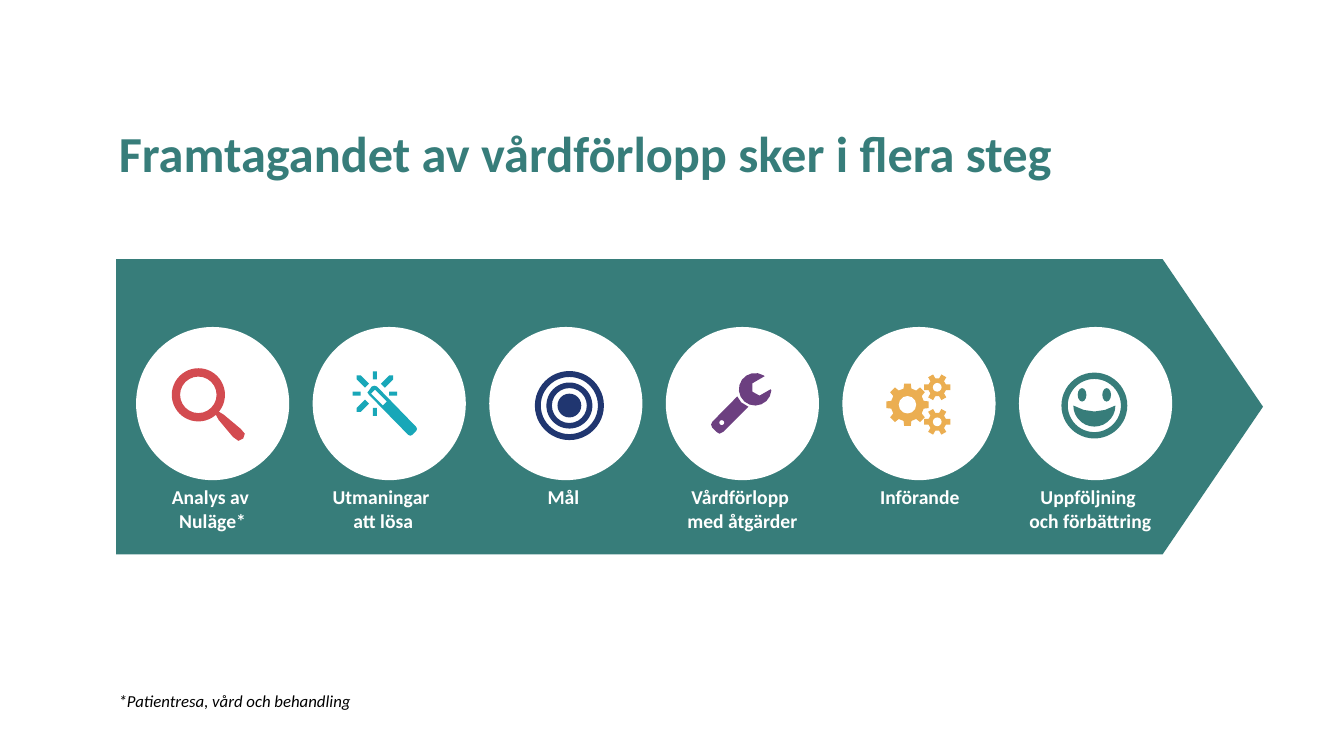
from math import cos, pi, radians, sin

from pptx import Presentation
from pptx.dml.color import RGBColor
from pptx.enum.shapes import MSO_SHAPE as Shape
from pptx.enum.text import MSO_ANCHOR as Anchor, MSO_AUTO_SIZE as AutoSize, PP_ALIGN as Align
from pptx.util import Cm, Pt

TEAL = RGBColor(0x37, 0x7D, 0x7A)
WHITE = RGBColor(0xFF, 0xFF, 0xFF)
BLACK = RGBColor(0x00, 0x00, 0x00)
RED = RGBColor(0xD3, 0x4B, 0x50)
CYAN = RGBColor(0x18, 0xA7, 0xB8)
NAVY = RGBColor(0x20, 0x36, 0x70)
PURPLE = RGBColor(0x6C, 0x3F, 0x80)
AMBER = RGBColor(0xEB, 0xAE, 0x51)

UNITS_PER_CM = 1000
STEP_PITCH = 4.45
DISC_RADIUS = 1.93
LABEL_WIDTH = 4.27


def write(frame, text, *, size, color, bold=False, italic=False,
          align=Align.LEFT, anchor=Anchor.TOP, spacing=None):
    frame.text = text
    frame.word_wrap = True
    frame.auto_size = AutoSize.NONE
    frame.vertical_anchor = anchor
    for paragraph in frame.paragraphs:
        paragraph.alignment = align
        paragraph.line_spacing = spacing
        for run in paragraph.runs:
            font = run.font
            font.name, font.size = "Calibri", Pt(size)
            font.bold, font.italic = bold, italic
            font.color.rgb = color


def paint(shape, color):
    shape.shadow.inherit = False
    shape.fill.solid()
    shape.fill.fore_color.rgb = color
    shape.line.fill.background()


def add_round(slide, x, y, rx, ry, color, kind=Shape.OVAL):
    shape = slide.shapes.add_shape(kind, Cm(x - rx), Cm(y - ry), Cm(2 * rx), Cm(2 * ry))
    paint(shape, color)
    return shape


def add_ring(slide, x, y, outer, inner, color):
    ring = add_round(slide, x, y, outer, outer, color, Shape.DONUT)
    ring.adjustments[0] = (outer - inner) / (2 * outer)


def add_outlines(slide, x, y, outlines, color):
    builder = None
    for outline in outlines:
        points = [(px * UNITS_PER_CM, py * UNITS_PER_CM) for px, py in outline]
        if builder is None:
            builder = slide.shapes.build_freeform(*points[0], scale=Cm(1) / UNITS_PER_CM)
        else:
            builder.move_to(*points[0])
        builder.add_line_segments(points[1:], close=True)
    paint(builder.convert_to_shape(Cm(x), Cm(y)), color)


def arc(x, y, radius, start, end, count=14):
    angles = [radians(start + (end - start) * i / count) for i in range(count + 1)]
    return [(x + radius * cos(a), y + radius * sin(a)) for a in angles]


def quarter_turn(points, turns):
    for _ in range(turns):
        points = [(-y, x) for x, y in points]
    return points


def add_magnifier(slide, x, y, color):
    handle = [(0.15, 0.2), (0.28, 0.28), (0.71, 0.64), (0.81, 0.76), (0.77, 0.88),
              (0.65, 0.94), (0.51, 0.84), (0.15, 0.41), (0.08, 0.28)]
    add_ring(slide, x - 0.36, y - 0.22, 0.67, 0.46, color)
    add_outlines(slide, x, y, [handle], color)


def add_wand(slide, x, y, color):
    straight_ray = [(0.36, -0.05), (0.56, -0.05), (0.56, 0.05), (0.36, 0.05)]
    slanted_ray = [(-0.15, -0.25), (-0.36, -0.46), (-0.46, -0.46),
                   (-0.46, -0.36), (-0.25, -0.15)]
    stick = [(1.04, 0.84), (0.05, -0.18), (-0.01, -0.2), (-0.08, -0.18),
             (-0.15, -0.08), (-0.19, -0.03), (-0.15, 0.03), (0.84, 1.04),
             (0.89, 1.06), (0.94, 1.04), (1.04, 0.94), (1.06, 0.89)]
    tip = [(0.2, 0.3), (-0.1, 0), (0, -0.1), (0.3, 0.2)]
    rays = [quarter_turn(straight_ray, turns) for turns in range(4)]
    rays += [quarter_turn(slanted_ray, turns) for turns in (0, 1, 3)]
    add_outlines(slide, x - 0.36, y - 0.25, rays + [stick, tip], color)


def add_target(slide, x, y, color):
    x, y = x + 0.09, y + 0.05
    for outer, inner in ((0.87, 0.72), (0.58, 0.44)):
        add_ring(slide, x, y, outer, inner, color)
    add_round(slide, x, y, 0.3, 0.3, color)


def add_wrench(slide, x, y, color):
    handle = [(0.15, 0.08), (-0.48, 0.71), (-0.58, 0.76), (-0.66, 0.71), (-0.76, 0.61),
              (-0.79, 0.53), (-0.76, 0.46), (-0.13, -0.18), (-0.03, -0.03)]
    jaw = [(0.56, -0.69), (0.25, -0.51), (0.25, -0.3), (0.43, -0.2), (0.71, -0.36)]
    head = arc(0.32, -0.36, 0.41, 4, 301) + jaw
    add_outlines(slide, x, y, [handle, head], color)
    add_round(slide, x - 0.52, y + 0.48, 0.06, 0.06, WHITE)


def add_gear(slide, x, y, teeth, tip, root, hole, color):
    pitch = 2 * pi / teeth
    profile = [(-0.3, root), (-0.2, tip), (0.2, tip), (0.3, root)]
    rim = [(r * cos((tooth + part) * pitch), r * sin((tooth + part) * pitch))
           for tooth in range(teeth) for part, r in profile]
    add_outlines(slide, x, y, [rim], color)
    add_round(slide, x, y, hole, hole, WHITE)


def add_gears(slide, x, y, color):
    add_gear(slide, x - 0.29, y + 0.03, 8, 0.54, 0.42, 0.22, color)
    for dy in (-0.41, 0.46):
        add_gear(slide, x + 0.46, y + dy, 6, 0.34, 0.23, 0.11, color)


def add_smiley(slide, x, y, color):
    x, y = x - 0.03, y + 0.05
    mouth = arc(0, 0, 0.53, 0, 180) + [(-0.27, 0.11), (0, 0.15), (0.27, 0.11)]
    add_ring(slide, x, y, 0.83, 0.67, color)
    add_outlines(slide, x, y, [mouth], color)
    for dx in (-0.31, 0.31):
        add_round(slide, x + dx, y - 0.27, 0.11, 0.17, color)


STEPS = [
    ("Analys av \nNuläge*", 0, add_magnifier, RED),
    ("Utmaningar \natt lösa", -0.15, add_wand, CYAN),
    ("Mål", -0.06, add_target, NAVY),
    ("Vårdförlopp \vmed åtgärder", 0, add_wrench, PURPLE),
    ("Införande", 0.02, add_gears, AMBER),
    ("Uppföljning \voch förbättring", -0.13, add_smiley, TEAL),
]


def add_step(slide, x, y, label, nudge, add_icon, color):
    add_round(slide, x, y, DISC_RADIUS, DISC_RADIUS, WHITE)
    add_icon(slide, x, y, color)
    caption = slide.shapes.add_textbox(
        Cm(x + nudge - LABEL_WIDTH / 2), Cm(y + DISC_RADIUS), Cm(LABEL_WIDTH), Cm(1.45))
    write(caption.text_frame, label, size=14, color=WHITE, bold=True, align=Align.CENTER)


def add_process(slide, left, top, width, height):
    arrow = slide.shapes.add_shape(Shape.PENTAGON, Cm(left), Cm(top), Cm(width), Cm(height))
    arrow.adjustments[0] = 0.34
    paint(arrow, TEAL)
    for index, step in enumerate(STEPS):
        add_step(slide, left + 2.43 + index * STEP_PITCH, top + 3.64, *step)


def add_title(slide, left, top, width, height):
    title = slide.shapes.title
    title.left, title.top, title.width, title.height = Cm(left), Cm(top), Cm(width), Cm(height)
    write(title.text_frame, "Framtagandet av vårdförlopp sker i flera steg",
          size=36, color=TEAL, bold=True, anchor=Anchor.BOTTOM, spacing=0.9)


def add_footnote(slide, left, top, width, height):
    footnote = slide.shapes.add_textbox(Cm(left), Cm(top), Cm(width), Cm(height))
    write(footnote.text_frame, "*Patientresa, vård och behandling",
          size=12, color=BLACK, italic=True)


def main():
    deck = Presentation()
    deck.slide_width, deck.slide_height = Cm(33.87), Cm(19.05)
    slide = deck.slides.add_slide(deck.slide_layouts[5])
    add_title(slide, 2.74, 3.05, 31.12, 1.7)
    add_process(slide, 2.93, 6.53, 28.9, 7.44)
    add_footnote(slide, 2.74, 17.27, 7.04, 0.76)
    deck.save("out.pptx")


if __name__ == "__main__":
    main()
